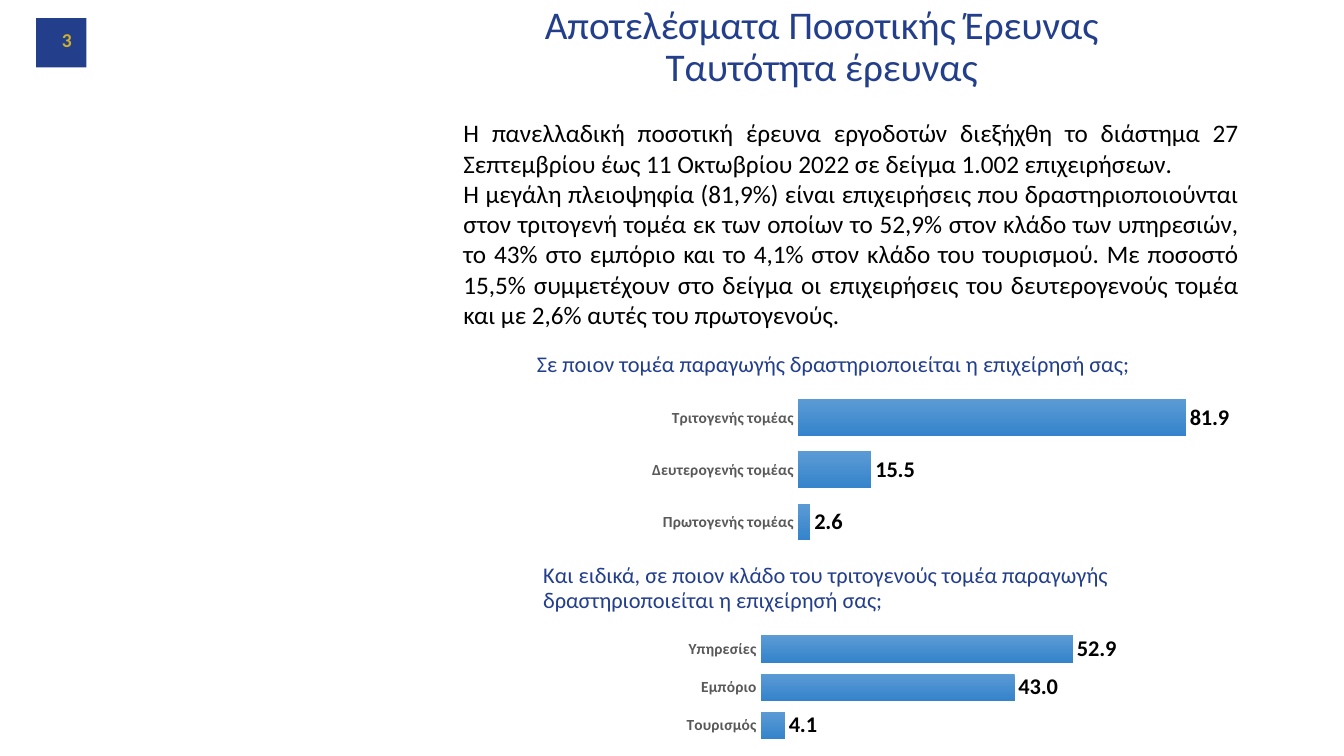
from lxml import etree
from pptx import Presentation
from pptx.chart.data import CategoryChartData
from pptx.dml.color import RGBColor
from pptx.enum.chart import XL_CHART_TYPE, XL_LABEL_POSITION, XL_TICK_MARK
from pptx.enum.shapes import MSO_SHAPE
from pptx.enum.text import MSO_ANCHOR, MSO_AUTO_SIZE, PP_ALIGN
from pptx.oxml.ns import qn
from pptx.util import Cm, Pt

RECT = MSO_SHAPE.RECTANGLE
BARS = XL_CHART_TYPE.BAR_CLUSTERED
OUT = XL_LABEL_POSITION.OUTSIDE_END
NO_TICK = XL_TICK_MARK.NONE
NO_FIT = MSO_AUTO_SIZE.NONE
TOP, MID, LOW = MSO_ANCHOR.TOP, MSO_ANCHOR.MIDDLE, MSO_ANCHOR.BOTTOM
LEFT, MIDST, RIGHT, JUST = (PP_ALIGN.LEFT, PP_ALIGN.CENTER,
                            PP_ALIGN.RIGHT, PP_ALIGN.JUSTIFY)
FONT = "Calibri"
HUES = {"navy": "233F8C", "gold": "CEB02C", "black": "000000",
        "gray": "595959", "light": "5B9BD5", "deep": "3483CB"}

TITLE = "Αποτελέσματα Ποσοτικής Έρευνας\vΤαυτότητα έρευνας"
BODY = (
    "Η πανελλαδική ποσοτική έρευνα εργοδοτών διεξήχθη το διάστημα 27 "
    "Σεπτεμβρίου έως 11 Οκτωβρίου 2022 σε δείγμα 1.002 επιχειρήσεων.\n"
    "Η μεγάλη πλειοψηφία (81,9%) είναι επιχειρήσεις που δραστηριοποιούνται "
    "στον τριτογενή τομέα εκ των οποίων το 52,9% στον κλάδο των υπηρεσιών, "
    "το 43% στο εμπόριο και το 4,1% στον κλάδο του τουρισμού. Με ποσοστό "
    "15,5% συμμετέχουν στο δείγμα οι επιχειρήσεις του δευτερογενούς τομέα "
    "και με 2,6% αυτές του πρωτογενούς.")
SECTOR = "Σε ποιον τομέα παραγωγής δραστηριοποιείται η επιχείρησή σας;"
BRANCH = ("Και ειδικά, σε ποιον κλάδο του τριτογενούς τομέα παραγωγής "
          "δραστηριοποιείται η επιχείρησή σας;")


def hue(name):
    """Return a palette colour."""
    return RGBColor.from_string(HUES[name])


def style(font, size, color, bold=False):
    """Set the face, size, colour and weight of a font."""
    font.name, font.size, font.bold = FONT, Pt(size), bold
    font.color.rgb = hue(color)


def place(shape, box):
    """Move and size a shape, in centimetres."""
    shape.left, shape.top, shape.width, shape.height = map(Cm, box)


def write(shape, text, size, color, align, anchor, space=1.0, bold=False,
          wrap=True):
    """Fill a shape with formatted text."""
    frame = shape.text_frame
    frame.text = text
    frame.auto_size, frame.word_wrap = NO_FIT, wrap
    frame.vertical_anchor = anchor
    for para in frame.paragraphs:
        para.alignment, para.line_spacing = align, space
        for run in para.runs:
            style(run.font, size, color, bold)


def add_text(slide, box, *args, **opts):
    """Add a text box."""
    write(slide.shapes.add_textbox(*map(Cm, box)), *args, **opts)


def add_badge(slide):
    """Add the numbered square."""
    badge = slide.shapes.add_shape(RECT, *map(Cm, (0.91, 0.46, 1.27, 1.24)))
    badge.shadow.inherit = False
    badge.fill.solid()
    badge.fill.fore_color.rgb = hue("navy")
    badge.line.fill.background()
    add_text(slide, (0.97, 0.48, 1.09, 1.02), "3", 14, "gold", RIGHT, MID,
             bold=True)


def set_plot(chart, area):
    """Fix the inner plot area as fractions of the chart."""
    plot = chart.plots[0]._element.getparent()
    for old in plot.findall(qn("c:layout")):
        plot.remove(old)
    layout = etree.Element(qn("c:layout"))
    plot.insert(0, layout)
    manual = etree.SubElement(layout, qn("c:manualLayout"))
    pairs = [("layoutTarget", "inner"), ("xMode", "edge"), ("yMode", "edge")]
    for tag, val in pairs + list(zip("xywh", area)):
        etree.SubElement(manual, qn("c:" + tag)).set("val", str(val))


def add_bars(slide, box, data, peak, area):
    """Add a bar chart with a hidden value axis."""
    table = CategoryChartData(number_format="0.0")
    table.categories = list(data)
    table.add_series("Series 1", list(data.values()))
    chart = slide.shapes.add_chart(BARS, *map(Cm, box), table).chart
    chart.has_legend = chart.has_title = False
    style(chart.font, 10, "black")
    set_plot(chart, area)

    cats, vals = chart.category_axis, chart.value_axis
    cats.major_tick_mark = cats.minor_tick_mark = NO_TICK
    cats.format.line.fill.background()
    style(cats.tick_labels.font, 11, "gray", True)
    vals.visible = vals.has_major_gridlines = False
    vals.minimum_scale, vals.maximum_scale = 0, peak

    plot = chart.plots[0]
    plot.gap_width, plot.vary_by_categories = 41, False
    plot.has_data_labels = True
    labels = plot.data_labels
    labels.show_value, labels.position = True, OUT
    labels.number_format, labels.number_format_is_linked = "0.0", False
    style(labels.font, 16, "black", True)
    fill = plot.series[0].format.fill
    fill.gradient()
    fill.gradient_angle = 270
    for stop, name, pos in zip(fill.gradient_stops, ("light", "deep"), (0, 1)):
        stop.color.rgb, stop.position = hue(name), pos


def main():
    """Build the slide and save it."""
    deck = Presentation()
    deck.slide_width, deck.slide_height = Cm(33.87), Cm(19.05)
    slide = deck.slides.add_slide(deck.slide_layouts[5])
    title = slide.shapes.title
    place(title, (13.39, 0, 14.63, 2.41))
    write(title, TITLE, 28, "navy", MIDST, MID, 0.9, wrap=False)
    add_badge(slide)
    add_text(slide, (11.43, 2.84, 20.04, 5.64), BODY, 18, "black", JUST, TOP)

    add_text(slide, (13.28, 8.56, 18.44, 1.07), SECTOR, 16, "navy", LEFT,
             LOW, 0.9)
    add_bars(slide, (11.91, 9.3, 19.53, 4.8),
             {"Πρωτογενής τομέας": 2.6, "Δευτερογενής τομέας": 15.5,
              "Τριτογενής τομέας": 81.9}, 90, (0.42, 0.12, 0.55, 0.82))
    add_text(slide, (13.44, 14.5, 18.44, 1.07), BRANCH, 16, "navy", LEFT,
             LOW, 0.9)
    add_bars(slide, (14.91, 15.52, 13.74, 3.53),
             {"Τουρισμός": 4.1, "Εμπόριο": 43, "Υπηρεσίες": 52.9}, 60,
             (0.31, 0.1, 0.65, 0.82))
    deck.save("out.pptx")


if __name__ == "__main__":
    main()
